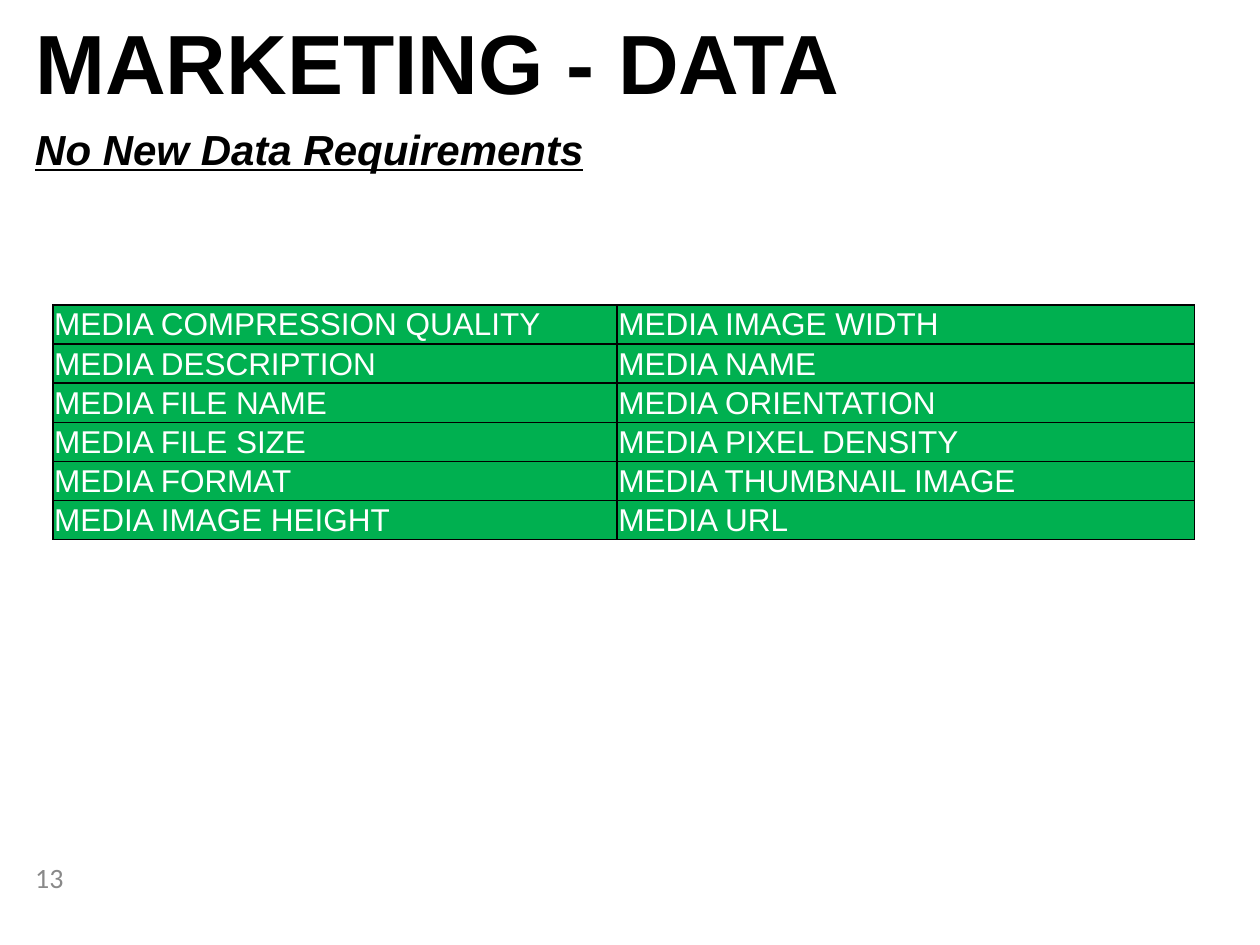
from lxml.etree import SubElement
from pptx import Presentation
from pptx.dml.color import RGBColor
from pptx.enum.text import MSO_ANCHOR
from pptx.oxml.ns import qn
from pptx.util import Pt

# Content
TITLE = "MARKETING - DATA"
SUBTITLE = "No New Data Requirements"
PAGE_NUMBER = "13"
MEDIA_FIELDS = [
    ("MEDIA COMPRESSION QUALITY", "MEDIA IMAGE WIDTH"),
    ("MEDIA DESCRIPTION", "MEDIA NAME"),
    ("MEDIA FILE NAME", "MEDIA ORIENTATION"),
    ("MEDIA FILE SIZE", "MEDIA PIXEL DENSITY"),
    ("MEDIA FORMAT", "MEDIA THUMBNAIL IMAGE"),
    ("MEDIA IMAGE HEIGHT", "MEDIA URL"),
]

# Layout, in points
LEFT = 13
COLUMN_WIDTHS = (322.5, 330)
ROW_HEIGHT = 18.72
BLACK, WHITE, GREEN, GRAY = "000000", "FFFFFF", "00B050", "898989"


def color(hex_code):
    return RGBColor.from_string(hex_code)


def write(frame, text, size, ink=BLACK, font="Arial", bold=False,
          italic=False, underline=False, anchor=MSO_ANCHOR.TOP, spacing=None):
    frame.word_wrap = True
    frame.vertical_anchor = anchor
    paragraph = frame.paragraphs[0]
    if spacing:
        paragraph.line_spacing = Pt(spacing)
    run = paragraph.add_run()
    run.text = text
    run.font.name, run.font.size = font, Pt(size)
    run.font.bold, run.font.italic, run.font.underline = bold, italic, underline
    run.font.color.rgb = color(ink)


def format_cell(cell):
    cell.margin_left = cell.margin_right = cell.margin_top = Pt(0.75)
    cell.margin_bottom = 0
    properties = cell._tc.get_or_add_tcPr()
    for side in ("lnL", "lnR", "lnT", "lnB"):
        border = SubElement(properties, qn(f"a:{side}"), w=str(Pt(1)))
        fill = SubElement(border, qn("a:solidFill"))
        SubElement(fill, qn("a:srgbClr"), val=BLACK)
    cell.fill.solid()
    cell.fill.fore_color.rgb = color(GREEN)


prs = Presentation()
prs.slide_width, prs.slide_height = Pt(720), Pt(540)
slide = prs.slides.add_slide(prs.slide_layouts[5])

# Page number
page_number = slide.shapes.add_textbox(Pt(LEFT), Pt(486.7), Pt(168), Pt(28.8))
write(page_number.text_frame, PAGE_NUMBER, 16, ink=GRAY, font="Calibri",
      anchor=MSO_ANCHOR.MIDDLE)

# Title
title = slide.shapes.title
title.left, title.top, title.width, title.height = Pt(LEFT), Pt(17.3), Pt(687.6), Pt(46)
write(title.text_frame, TITLE, 48, bold=True, spacing=43)
title.text_frame.paragraphs[0].alignment = 1  # left

# Table of media fields
media_table = slide.shapes.add_table(
    len(MEDIA_FIELDS), len(COLUMN_WIDTHS), Pt(30.2), Pt(174.2),
    Pt(sum(COLUMN_WIDTHS)), Pt(ROW_HEIGHT * len(MEDIA_FIELDS))).table
media_table.first_row = media_table.horz_banding = False
for column, width in zip(media_table.columns, COLUMN_WIDTHS):
    column.width = Pt(width)
for r, fields in enumerate(MEDIA_FIELDS):
    media_table.rows[r].height = Pt(ROW_HEIGHT)
    for c, field in enumerate(fields):
        cell = media_table.cell(r, c)
        format_cell(cell)
        write(cell.text_frame, field, 18, ink=WHITE)
        cell.vertical_anchor = MSO_ANCHOR.MIDDLE

# Subtitle
subtitle = slide.shapes.add_textbox(Pt(LEFT), Pt(67), Pt(555), Pt(36))
write(subtitle.text_frame, SUBTITLE, 24, bold=True, italic=True, underline=True)

prs.save("out.pptx")
